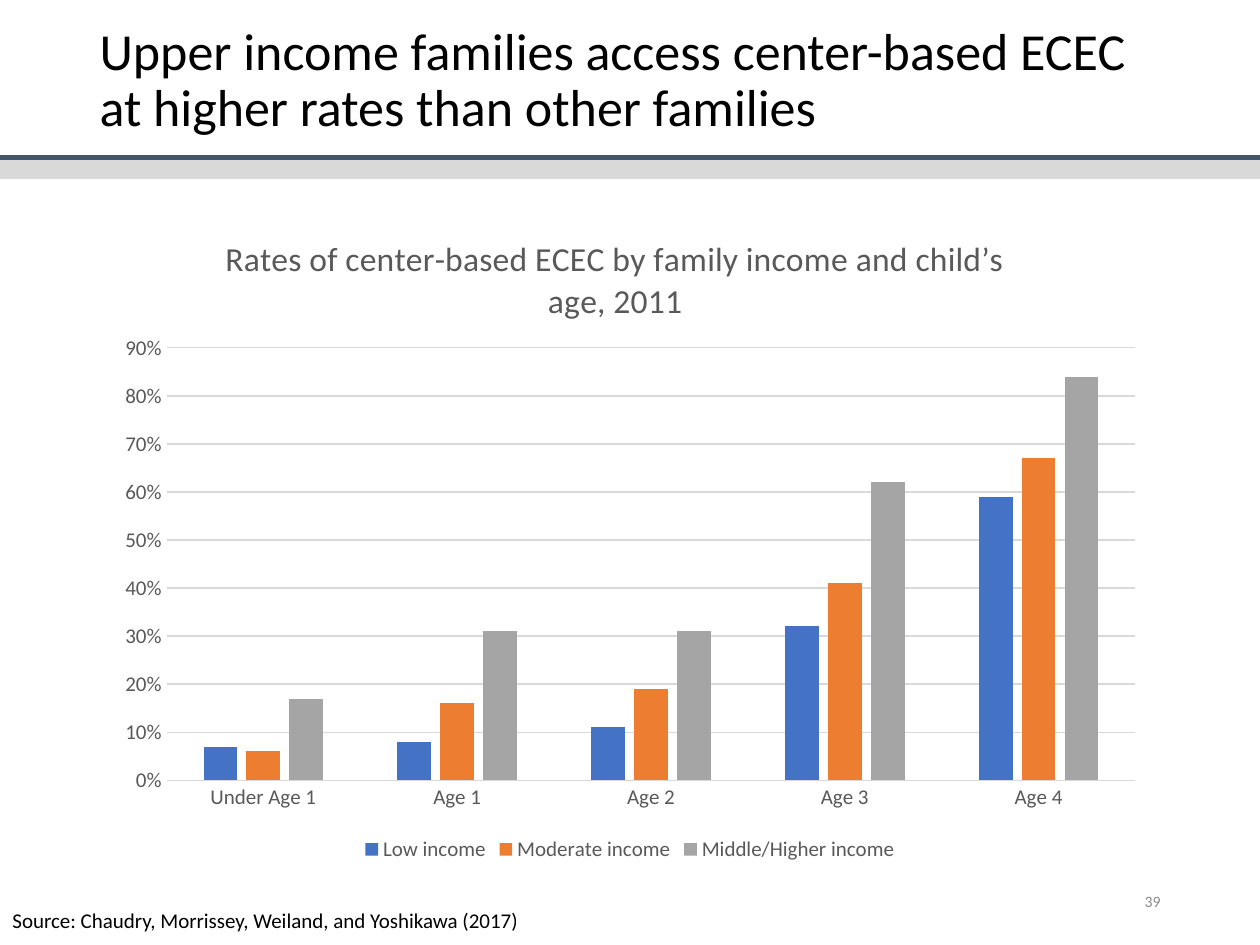
from lxml import etree
from pptx import Presentation
from pptx.chart.data import CategoryChartData
from pptx.dml.color import RGBColor
from pptx.enum.chart import XL_CHART_TYPE as ChartType
from pptx.enum.chart import XL_LEGEND_POSITION as LegendPosition
from pptx.enum.chart import XL_TICK_MARK as TickMark
from pptx.enum.shapes import MSO_CONNECTOR as Connector
from pptx.enum.text import MSO_ANCHOR as Anchor
from pptx.enum.text import PP_ALIGN as Align
from pptx.oxml import parse_xml
from pptx.oxml.ns import nsdecls, qn
from pptx.util import Inches, Pt

COLORS = {
    "text": "000000",
    "number": "8C8C8C",
    "label": "595959",
    "grid": "D9D9D9",
    "rule": "44546A",
    "low": "4472C4",
    "moderate": "ED7D31",
    "higher": "A5A5A5",
}
AGES = ["Under Age 1", "Age 1", "Age 2", "Age 3", "Age 4"]
RATES = [
    ("Low income", "low", [0.07, 0.08, 0.11, 0.32, 0.59]),
    ("Moderate income", "moderate", [0.06, 0.16, 0.19, 0.41, 0.67]),
    ("Middle/Higher income", "higher", [0.17, 0.31, 0.31, 0.62, 0.84]),
]


class SlideBuilder:
    """Holds the style and the current slide."""

    font = "Calibri"

    def __init__(self, page):
        self.page = page

    def color(self, name):
        return RGBColor.from_string(COLORS[name])

    def style(self, font, size, color):
        font.name = self.font
        font.size = Pt(size)
        font.bold = False
        font.color.rgb = self.color(color)

    def add_span(self, para, text, size, color):
        span = para.add_run()
        span.text = text
        self.style(span.font, size, color)

    def title(self, text, place, size):
        box = self.page.shapes.title
        box.left, box.top, box.width, box.height = map(Inches, place)
        box.text_frame.vertical_anchor = Anchor.MIDDLE
        para = box.text_frame.paragraphs[0]
        para.alignment = Align.LEFT
        para.line_spacing = 0.9
        self.add_span(para, text, size, "text")

    def text(self, text, place, size, color, align=Align.LEFT, anchor=Anchor.TOP):
        frame = self.page.shapes.add_textbox(*map(Inches, place)).text_frame
        frame.word_wrap = True
        frame.vertical_anchor = anchor
        para = frame.paragraphs[0]
        para.alignment = align
        self.add_span(para, text, size, color)

    def rule(self, y, color, width):
        line = self.page.shapes.add_connector(
            Connector.STRAIGHT, 0, Inches(y), Inches(10), Inches(y))
        line.line.color.rgb = self.color(color)
        line.line.width = Pt(width)
        etree.SubElement(line._element.spPr, qn("a:effectLst"))

    def layout(self, parent, **values):
        """Fix the place of a chart part, in shares of the chart."""
        target = '<c:layoutTarget val="inner"/>' if "w" in values else ""
        modes = "".join(f'<c:{key}Mode val="edge"/>' for key in "xy")
        sizes = "".join(f'<c:{key} val="{value}"/>' for key, value in values.items())
        for old in parent.findall(qn("c:layout")):
            parent.remove(old)
        layout = parse_xml(
            f'<c:layout {nsdecls("c")}><c:manualLayout>{target}{modes}{sizes}'
            "</c:manualLayout></c:layout>")
        text = parent.find(qn("c:tx"))
        parent.insert(0 if text is None else parent.index(text) + 1, layout)

    def axis(self, axis):
        axis.major_tick_mark = axis.minor_tick_mark = TickMark.NONE
        self.style(axis.tick_labels.font, 12, "label")

    def column_chart(self, heading, categories, rows, place):
        data = CategoryChartData(number_format="0%")
        data.categories = categories
        for name, _, values in rows:
            data.add_series(name, values)
        chart = self.page.shapes.add_chart(
            ChartType.COLUMN_CLUSTERED, *map(Inches, place), data).chart
        self.style(chart.font, 10, "text")

        # Heading and legend
        chart.has_title = True
        heading_para = chart.chart_title.text_frame.paragraphs[0]
        self.add_span(heading_para, heading, 19.2, "label")
        self.layout(chart.chart_title._element, x=0.11, y=0.04)
        chart.has_legend = True
        chart.legend.position = LegendPosition.BOTTOM
        chart.legend.include_in_layout = False
        self.style(chart.legend.font, 12, "label")

        # Axes
        ages, rates = chart.category_axis, chart.value_axis
        self.axis(ages)
        self.axis(rates)
        rates.minimum_scale, rates.maximum_scale, rates.major_unit = 0, 0.9, 0.1
        rates.tick_labels.number_format = "0%"
        rates.tick_labels.number_format_is_linked = False
        rates.format.line.fill.background()
        for line in (ages.format.line, rates.major_gridlines.format.line):
            line.color.rgb = self.color("grid")
            line.width = Pt(0.75)

        # Columns
        plot = chart.plots[0]
        plot.gap_width, plot.overlap = 219, -27
        plot.vary_by_categories = False
        for series, (_, color, _) in zip(plot.series, rows):
            series.format.fill.solid()
            series.format.fill.fore_color.rgb = self.color(color)
        self.layout(plot._element.getparent(), x=0.06, y=0.22, w=0.92, h=0.65)


def main():
    deck = Presentation()
    deck.slide_width, deck.slide_height = Inches(10), Inches(7.5)
    slide = SlideBuilder(deck.slides.add_slide(deck.slide_layouts[5]))

    # Header
    slide.rule(1.33, "grid", 12.5)
    slide.rule(1.25, "rule", 3)
    slide.title("Upper income families access center-based ECEC "
                "at higher rates than other families", (0.69, 0.15, 8.62, 0.99), 29.7)

    # Chart
    slide.column_chart("Rates of center-based ECEC by family income and child’s age, 2011",
                       AGES, RATES, (0.82, 1.6, 8.36, 5.28))

    # Footer
    slide.text("39", (7.06, 6.95, 2.25, 0.4), 9, "number", Align.RIGHT, Anchor.MIDDLE)
    slide.text("Source: Chaudry, Morrissey, Weiland, and Yoshikawa (2017)",
               (0, 7.15, 5.38, 0.3), 12, "text")

    deck.save("out.pptx")


if __name__ == "__main__":
    main()
